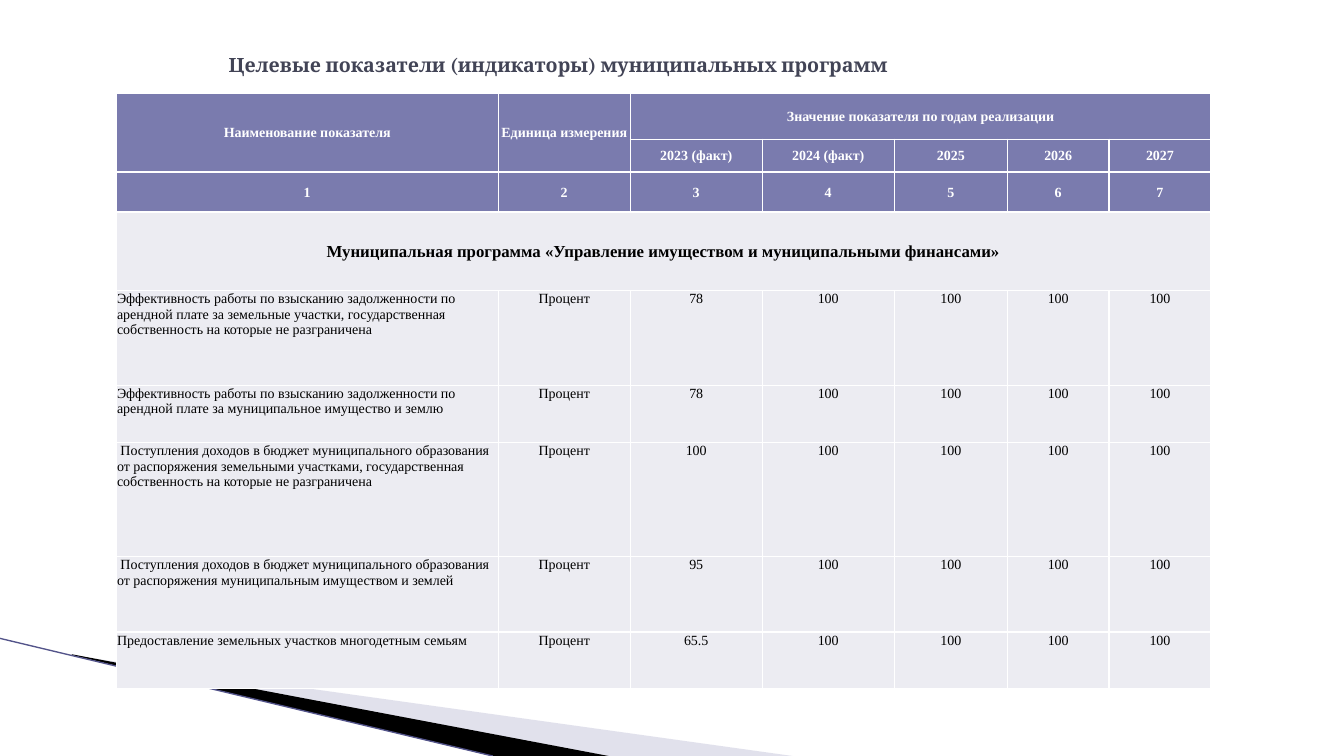
"""Build a slide with a table of target indicators of municipal programmes."""
from dataclasses import dataclass

from lxml.etree import SubElement
from pptx import Presentation
from pptx.dml.color import RGBColor
from pptx.enum.shapes import MSO_CONNECTOR
from pptx.enum.text import MSO_ANCHOR, PP_ALIGN
from pptx.oxml import parse_xml
from pptx.oxml.ns import nsdecls, qn
from pptx.slide import Slide
from pptx.table import _Cell
from pptx.util import Pt

HEADER_FILL = "7A7BAE"
BODY_FILL = "ECECF2"
WHITE = "FFFFFF"
BLACK = "000000"
TABLE_FONT = "Times New Roman"
COLUMN_WIDTHS = [272.9, 94.3, 94.3, 94.3, 80.8, 72.7, 72.7]
ROW_HEIGHTS = [33, 23.5, 28.6, 56, 67.8, 40.8, 81.4, 54, 40.5]
HEADER_ROWS = 3
SECTION_ROW = 3


@dataclass
class Wedge:
    """A filled decorative outline."""

    points: list[tuple[float, float]]
    color: str
    opacity: int


@dataclass
class Indicator:
    """An indicator with its first yearly value."""

    name: str
    first_value: str


@dataclass
class Span:
    """A merged block of table cells."""

    top: int
    left: int
    bottom: int
    right: int


WEDGES = [
    Wedge([(52.6, 468.4), (566, 540), (434, 540)], "B6B6D1", 40),
    Wedge([(51.1, 467.3), (434.8, 540), (351.3, 540), (51.8, 468)], BLACK, 100),
]
INDICATORS = [
    Indicator("Эффективность работы по взысканию задолженности по арендной плате за "
              "земельные участки, государственная собственность на которые не разграничена", "78"),
    Indicator("Эффективность работы по взысканию задолженности по арендной плате за "
              "муниципальное имущество и землю", "78"),
    Indicator(" Поступления доходов в бюджет муниципального образования от распоряжения "
              "земельными участками, государственная собственность на которые не разграничена", "100"),
    Indicator(" Поступления доходов в бюджет муниципального образования от распоряжения "
              "муниципальным имуществом и землей", "95"),
    Indicator("Предоставление земельных участков многодетным семьям", "65.5"),
]
SPANS = [Span(0, 0, 1, 0), Span(0, 1, 1, 1), Span(0, 2, 0, 6), Span(3, 0, 3, 6)]
ROWS = [
    ["Наименование показателя", "Единица измерения", "Значение показателя по годам реализации"],
    ["", "", "2023 (факт)", "2024 (факт)", "2025", "2026", "2027"],
    [str(number) for number in range(1, 8)],
    ["Муниципальная программа «Управление имуществом и муниципальными финансами»"],
    *[[item.name, "Процент", item.first_value] + ["100"] * 4 for item in INDICATORS],
]


def rgb(color: str) -> RGBColor:
    """Turn a hex string into a colour."""
    return RGBColor.from_string(color)


def draw_wedge(page: Slide, wedge: Wedge) -> None:
    """Draw one decorative outline."""
    vertices = [(Pt(x), Pt(y)) for x, y in wedge.points]
    builder = page.shapes.build_freeform(*vertices[0], scale=1.0)
    builder.add_line_segments(vertices[1:], close=True)
    shape = builder.convert_to_shape()
    shape.shadow.inherit = False
    shape.line.fill.background()
    shape.fill.solid()
    shape.fill.fore_color.rgb = rgb(wedge.color)
    if wedge.opacity < 100:
        color = shape.fill._xPr.find(qn("a:solidFill"))[0]
        SubElement(color, qn("a:alpha"), val=str(wedge.opacity * 1000))


def draw_edge(page: Slide) -> None:
    """Draw the thin line along the wedges."""
    edge = page.shapes.add_connector(MSO_CONNECTOR.STRAIGHT, Pt(0), Pt(456), Pt(352), Pt(540))
    edge.line.color.rgb = rgb("53548A")
    edge.line.width = Pt(0.95)
    SubElement(edge._element.spPr, qn("a:effectLst"))


def draw_title(page: Slide) -> None:
    """Draw the heading."""
    box = page.shapes.add_textbox(Pt(156.2), Pt(21.6), Pt(648), Pt(49.7))
    frame = box.text_frame
    frame.word_wrap = True
    frame.vertical_anchor = MSO_ANCHOR.MIDDLE
    frame.text = "Целевые показатели (индикаторы) муниципальных программ"
    font = frame.paragraphs[0].runs[0].font
    font.name, font.size, font.bold = "Cambria", Pt(14), True
    font.color.rgb = rgb("424456")


def add_borders(cell: _Cell) -> None:
    """Give a cell thin white borders."""
    properties = cell._tc.get_or_add_tcPr()
    for index, side in enumerate("LRTB"):
        properties.insert(index, parse_xml(
            f'<a:ln{side} {nsdecls("a")} w="{Pt(1)}"><a:solidFill>'
            f'<a:srgbClr val="{WHITE}"/></a:solidFill></a:ln{side}>'))


def format_cell(cell: _Cell, row: int, column: int) -> None:
    """Style a cell by its place in the table."""
    header, body = row < HEADER_ROWS, row > SECTION_ROW
    cell.fill.solid()
    cell.fill.fore_color.rgb = rgb(HEADER_FILL if header else BODY_FILL)
    add_borders(cell)
    cell.margin_left = cell.margin_right = cell.margin_top = Pt(0.6)
    cell.margin_bottom = Pt(0)
    cell.vertical_anchor = MSO_ANCHOR.TOP if body else MSO_ANCHOR.MIDDLE
    para = cell.text_frame.paragraphs[0]
    para.alignment = PP_ALIGN.LEFT if body and column == 0 else PP_ALIGN.CENTER
    for run in para.runs:
        run.font.name = TABLE_FONT
        run.font.size = Pt(12 if row == SECTION_ROW else 10)
        run.font.bold = not body
        run.font.color.rgb = rgb(WHITE if header else BLACK)


def draw_table(page: Slide) -> None:
    """Draw the table of indicators."""
    table = page.shapes.add_table(
        len(ROW_HEIGHTS), len(COLUMN_WIDTHS), Pt(83), Pt(66.4),
        Pt(sum(COLUMN_WIDTHS)), Pt(sum(ROW_HEIGHTS))).table
    for column, width in zip(table.columns, COLUMN_WIDTHS):
        column.width = Pt(width)
    for row, height in zip(table.rows, ROW_HEIGHTS):
        row.height = Pt(height)
    for span in SPANS:
        table.cell(span.top, span.left).merge(table.cell(span.bottom, span.right))
    for row_index, texts in enumerate(ROWS):
        for column_index in range(len(COLUMN_WIDTHS)):
            cell = table.cell(row_index, column_index)
            if column_index < len(texts) and texts[column_index]:
                cell.text_frame.text = texts[column_index]
            format_cell(cell, row_index, column_index)


def main() -> None:
    """Build and save the deck."""
    deck = Presentation()
    deck.slide_width, deck.slide_height = Pt(960), Pt(540)
    page = deck.slides.add_slide(deck.slide_layouts[6])
    for wedge in WEDGES:
        draw_wedge(page, wedge)
    draw_edge(page)
    draw_title(page)
    draw_table(page)
    deck.save("out.pptx")


if __name__ == "__main__":
    main()
